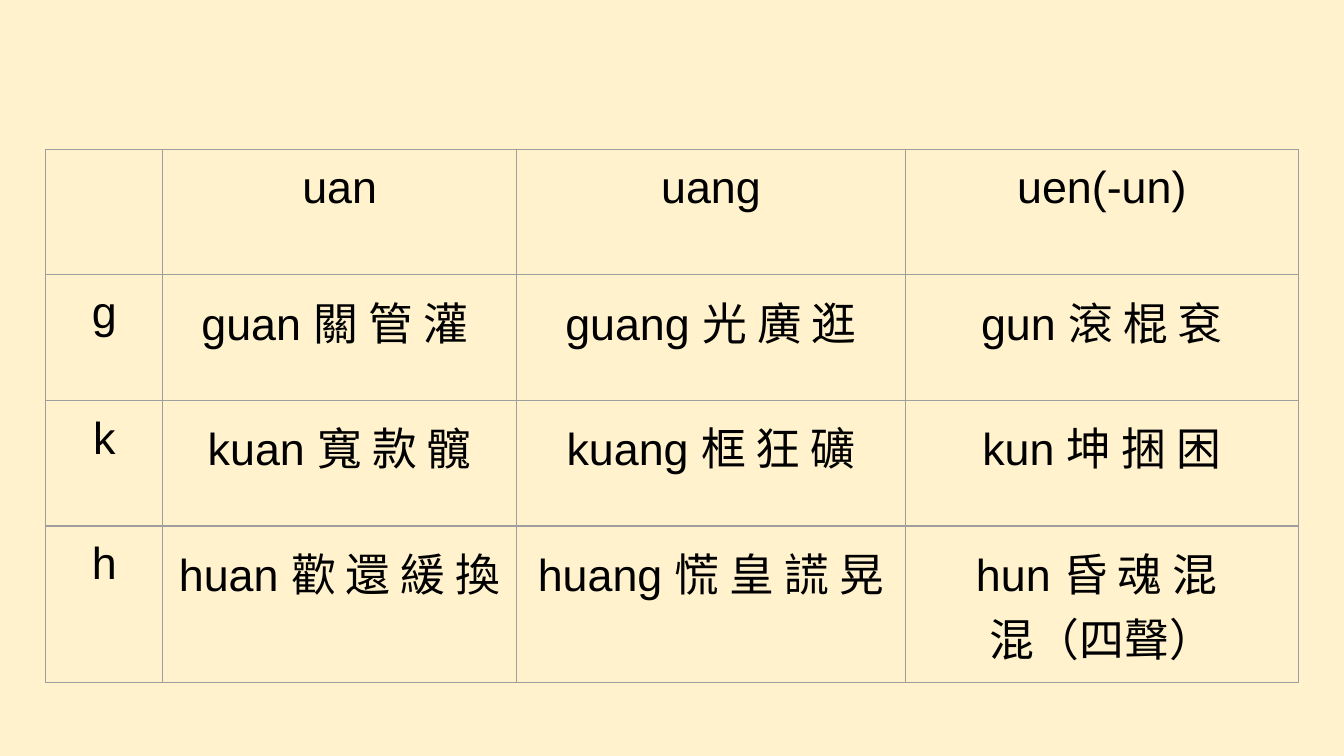
from lxml import etree
from pptx import Presentation
from pptx.dml.color import RGBColor
from pptx.enum.text import PP_ALIGN
from pptx.oxml.ns import qn
from pptx.util import Inches, Pt

CREAM = RGBColor(0xFF, 0xF2, 0xCC)
BLACK = RGBColor(0, 0, 0)
GRID_GREY = RGBColor(0x9E, 0x9E, 0x9E)

COLUMN_WIDTHS = [0.87, 2.63, 2.89, 2.92]
ROW_HEIGHT = Pt(67.3)
SYLLABLES = [
    ["", "uan", "uang", "uen(-un)"],
    ["g", "guan 關 管 灌 ", "guang 光 廣 逛", "gun 滾 棍 袞"],
    ["k", "kuan 寬 款 髖", "kuang 框 狂 礦", "kun 坤 捆 困"],
    ["h", "huan 歡 還 緩 換", "huang 慌 皇 謊 晃", "hun 昏 魂 混 \n混（四聲）"],
]


def add_borders(cell):
    """Draw a thin grey line on all four sides of a cell."""
    properties = cell._tc.get_or_add_tcPr()
    for position, side in enumerate(("a:lnL", "a:lnR", "a:lnT", "a:lnB")):
        line = etree.Element(qn(side), w=str(Pt(0.75)))
        fill = etree.SubElement(line, qn("a:solidFill"))
        etree.SubElement(fill, qn("a:srgbClr"), val=str(GRID_GREY))
        properties.insert(position, line)


def fill_cell(cell, text):
    cell.fill.background()
    cell.margin_left = cell.margin_right = Inches(0.1)
    cell.margin_top = cell.margin_bottom = Inches(0.1)
    add_borders(cell)
    cell.text = text
    for paragraph in cell.text_frame.paragraphs:
        paragraph.alignment = PP_ALIGN.CENTER
        paragraph.font.name = "Arial"
        paragraph.font.size = Pt(24)
        paragraph.font.color.rgb = BLACK


def add_syllable_table(slide, left, top, width, height):
    """Place the grid of initials (rows) and finals (columns)."""
    table = slide.shapes.add_table(
        len(SYLLABLES), len(COLUMN_WIDTHS), left, top, width, height
    ).table
    table.first_row = table.horz_banding = False
    for column, share in zip(table.columns, COLUMN_WIDTHS):
        column.width = int(width * share / sum(COLUMN_WIDTHS))
    for row, texts in zip(table.rows, SYLLABLES):
        row.height = height // len(SYLLABLES)
        for cell, text in zip(row.cells, texts):
            fill_cell(cell, text)


def main():
    presentation = Presentation()
    # Widescreen, 16:9
    presentation.slide_width = Inches(10)
    presentation.slide_height = Inches(10) * 9 // 16
    slide = presentation.slides.add_slide(presentation.slide_layouts[6])

    # Background
    slide.background.fill.solid()
    slide.background.fill.fore_color.rgb = CREAM

    # Syllable table
    add_syllable_table(
        slide, Inches(0.34), Inches(1.11),
        Inches(9.32), ROW_HEIGHT * len(SYLLABLES),
    )
    presentation.save("out.pptx")


if __name__ == "__main__":
    main()
